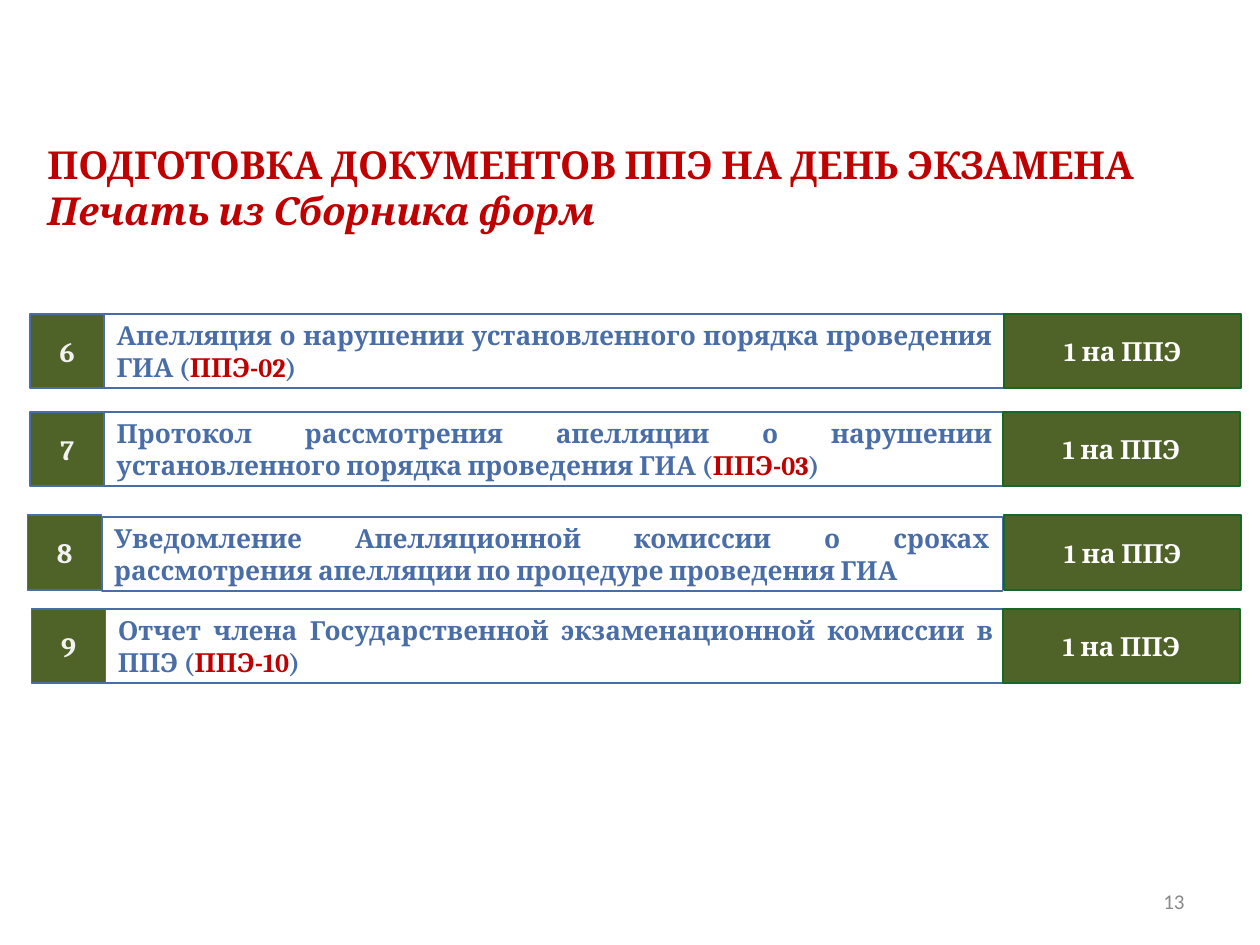
from pptx import Presentation
from pptx.dml.color import RGBColor
from pptx.enum.shapes import MSO_SHAPE as SHAPE
from pptx.enum.text import MSO_ANCHOR as ANCHOR, PP_ALIGN as ALIGN
from pptx.util import Pt

RED = RGBColor(0xC0, 0x00, 0x00)
BLUE = RGBColor(0x49, 0x6D, 0xA7)
OLIVE = RGBColor(0x4F, 0x62, 0x28)
GREEN = RGBColor(0x16, 0x68, 0x24)
WHITE = RGBColor(0xFF, 0xFF, 0xFF)
PALE = RGBColor(0xF2, 0xF2, 0xF2)
GREY = RGBColor(0x89, 0x89, 0x89)

ROW_H = 42.5
NUMBER_W = 42.3
FORM_W = 514.8
COUNT_W = 135.4

# number, number left, count left, top, form top, text before the code, code
ROWS = [
    ("6", 17.3, 573.9, 179.3, 179.3,
     "Апелляция о нарушении установленного порядка проведения ГИА (", "ППЭ-02"),
    ("7", 17.3, 573.2, 235.4, 235.4,
     "Протокол рассмотрения апелляции о нарушении установленного порядка "
     "проведения ГИА (", "ППЭ-03"),
    ("8", 15.8, 573.9, 294.5, 295.4,
     "Уведомление Апелляционной комиссии о сроках рассмотрения апелляции "
     "по процедуре проведения ГИА", None),
    ("9", 18, 573.2, 347.9, 347.9,
     "Отчет члена Государственной экзаменационной комиссии в ППЭ (", "ППЭ-10"),
]


def add_run(p, text, size, color, bold=True, italic=False, font="Cambria"):
    r = p.add_run()
    r.text = text
    r.font.name = font
    r.font.size = Pt(size)
    r.font.bold = bold
    r.font.italic = italic
    r.font.color.rgb = color


def add_text_box(s, left, top, width, height, anchor=ANCHOR.TOP):
    tf = s.shapes.add_textbox(Pt(left), Pt(top), Pt(width), Pt(height)).text_frame
    tf.word_wrap = True
    tf.vertical_anchor = anchor
    return tf


def add_cell(s, left, top, width, line, fill=None, align=ALIGN.CENTER):
    """Add a bordered rectangle and return its paragraph."""
    sp = s.shapes.add_shape(SHAPE.RECTANGLE, Pt(left), Pt(top), Pt(width), Pt(ROW_H))
    sp.shadow.inherit = False
    if fill is None:
        sp.fill.background()
    else:
        sp.fill.solid()
        sp.fill.fore_color.rgb = fill
    sp.line.color.rgb = line
    sp.line.width = Pt(1)
    tf = sp.text_frame
    tf.word_wrap = True
    tf.vertical_anchor = ANCHOR.MIDDLE
    p = tf.paragraphs[0]
    p.alignment = align
    return p


def add_row(s, number, left, count_left, top, form_top, text, code):
    # Form name, with its code in red
    p = add_cell(s, left + NUMBER_W, form_top, FORM_W, BLUE, align=ALIGN.JUSTIFY)
    add_run(p, text, 15, BLUE)
    if code:
        add_run(p, code, 15, RED)
        add_run(p, ")", 15, BLUE)

    # Row number
    p = add_cell(s, left, top, NUMBER_W, BLUE, OLIVE)
    add_run(p, number, 16, PALE)

    # Number of copies
    p = add_cell(s, count_left, top, COUNT_W, GREEN, OLIVE)
    add_run(p, "1 на ППЭ", 15, WHITE)


def main():
    prs = Presentation()
    prs.slide_width, prs.slide_height = Pt(720), Pt(540)
    s = prs.slides.add_slide(prs.slide_layouts[6])

    # Page number
    p = add_text_box(s, 516, 500.5, 168, 28.8, ANCHOR.MIDDLE).paragraphs[0]
    p.alignment = ALIGN.RIGHT
    add_run(p, "13", 12, GREY, bold=False, font="Calibri")

    # Title
    tf = add_text_box(s, 20, 77, 720, 87)
    add_run(tf.paragraphs[0], "ПОДГОТОВКА ДОКУМЕНТОВ ППЭ НА ДЕНЬ ЭКЗАМЕНА", 22, RED)
    add_run(tf.add_paragraph(), "Печать из Сборника форм", 22, RED, italic=True)

    # List of forms
    for row in ROWS:
        add_row(s, *row)

    prs.save("out.pptx")


if __name__ == "__main__":
    main()
